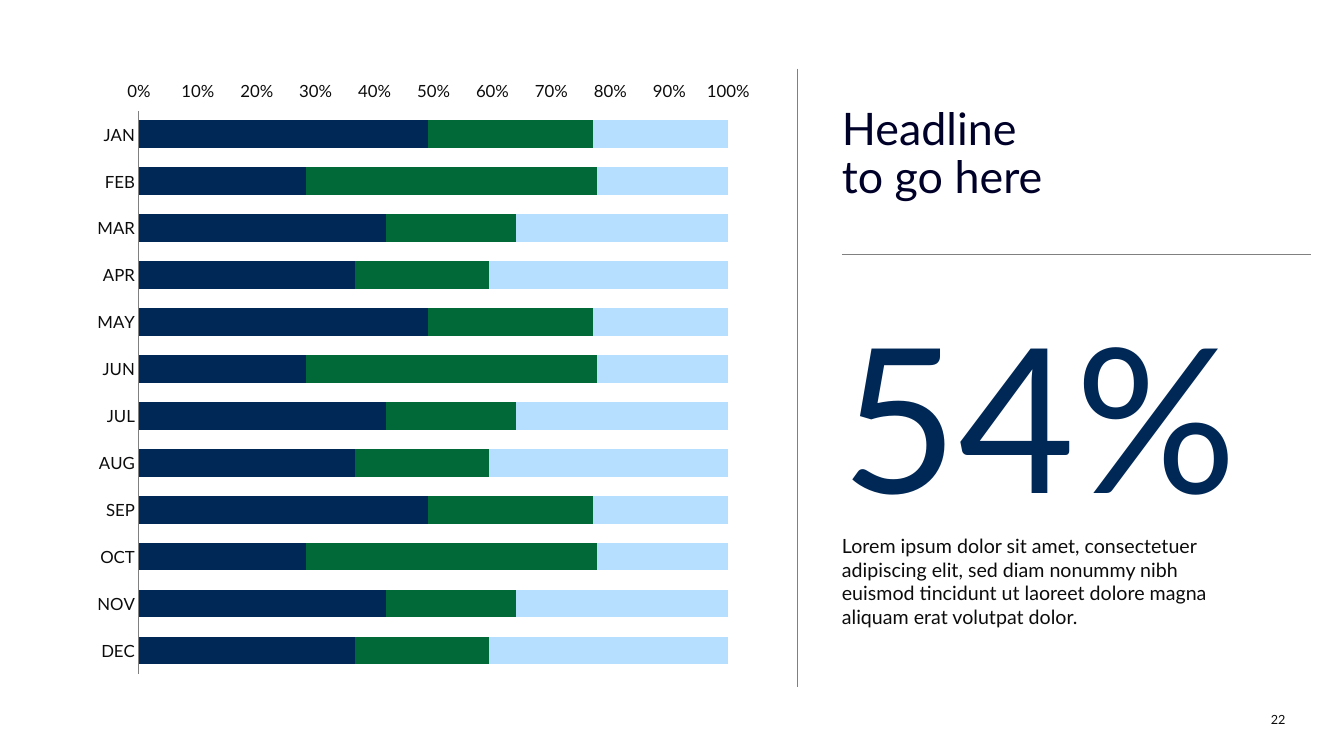
from lxml.etree import SubElement
from pptx import Presentation
from pptx.chart.data import CategoryChartData
from pptx.dml.color import RGBColor
from pptx.enum.chart import XL_CHART_TYPE, XL_TICK_LABEL_POSITION, XL_TICK_MARK
from pptx.enum.shapes import MSO_CONNECTOR
from pptx.enum.text import MSO_ANCHOR, PP_ALIGN
from pptx.oxml.ns import qn
from pptx.util import Inches, Pt

COLORS = {
    "navy": "002856",
    "green": "006937",
    "sky": "B6DFFF",
    "headline": "000129",
    "body": "0C0C0C",
    "rule": "808080",
}
FONT = "Lato"
MONTHS = ["JAN", "FEB", "MAR", "APR", "MAY", "JUN",
          "JUL", "AUG", "SEP", "OCT", "NOV", "DEC"]
SERIES = [
    ("Series 1", [49, 28, 42, 37], "navy"),
    ("Series 2", [28, 49, 22, 23], "green"),
    ("Series 3", [23, 22, 36, 41], "sky"),
]
BODY = ("Lorem ipsum dolor sit amet, consectetuer adipiscing elit, "
        "sed diam nonummy nibh euismod tincidunt ut laoreet dolore magna "
        "aliquam erat volutpat dolor.")


def color(name):
    """Return the named colour."""
    return RGBColor.from_string(COLORS[name])


def style_font(font, size, name, face=FONT):
    """Set the size, colour and face of a font."""
    font.size = Pt(size)
    font.name = face
    font.color.rgb = color(name)


def add_frame(page, left, top, width, height):
    """Add a wrapping text box without margins and return its text frame."""
    box = page.shapes.add_textbox(Inches(left), Inches(top), Inches(width), Inches(height))
    frame = box.text_frame
    frame.word_wrap = True
    frame.margin_left = frame.margin_right = frame.margin_top = frame.margin_bottom = 0
    return frame


def add_span(para, text, size, name):
    """Add one styled run to a paragraph."""
    span = para.add_run()
    span.text = text
    style_font(span.font, size, name)


def add_rule(page, left, top, right, bottom):
    """Draw a thin grey line."""
    rule = page.shapes.add_connector(
        MSO_CONNECTOR.STRAIGHT, Inches(left), Inches(top), Inches(right), Inches(bottom))
    rule.line.color.rgb = color("rule")
    rule.line.width = Pt(0.5)
    SubElement(rule._element.spPr, qn("a:effectLst"))


def add_month_chart(page, left, top, width, height):
    """Add the monthly stacked bar chart, January on top."""
    data = CategoryChartData()
    data.categories = MONTHS
    for name, cycle, _ in SERIES:
        data.add_series(name, cycle * (len(MONTHS) // len(cycle)))
    chart = page.shapes.add_chart(
        XL_CHART_TYPE.BAR_STACKED_100, Inches(left), Inches(top),
        Inches(width), Inches(height), data).chart
    chart.has_legend = False
    chart.has_title = False
    style_font(chart.font, 10, "body", "Arial")

    plot = chart.plots[0]
    plot.gap_width = 70
    plot.overlap = 100
    plot.vary_by_categories = False
    for series, (_, _, fill) in zip(plot.series, SERIES):
        series.format.fill.solid()
        series.format.fill.fore_color.rgb = color(fill)

    months = chart.category_axis
    months.reverse_order = True
    months.major_tick_mark = XL_TICK_MARK.NONE
    months.format.line.color.rgb = color("rule")
    months.format.line.width = Pt(0.75)

    shares = chart.value_axis
    shares.has_major_gridlines = False
    shares.major_tick_mark = XL_TICK_MARK.OUTSIDE
    shares.tick_label_position = XL_TICK_LABEL_POSITION.LOW
    shares.tick_labels.number_format = "0%"
    shares.tick_labels.number_format_is_linked = False
    shares.format.line.fill.background()
    for axis in (months, shares):
        style_font(axis.tick_labels.font, 12, "body")


def add_message(page, left, top, width, height):
    """Add the divider, headline, key figure and text beside the chart."""
    text_left = left + 0.44
    text_width = width - 0.44
    add_rule(page, left, top, left, top + height)
    add_rule(page, text_left, top + 1.84, left + width, top + 1.84)

    headline = add_frame(page, text_left, top + 0.38, text_width, 0.97).paragraphs[0]
    headline.line_spacing = 0.9
    add_span(headline, "Headline ", 32, "headline")
    headline.add_line_break()
    add_span(headline, "to go here", 32, "headline")

    frame = add_frame(page, text_left, top + 2.22, 4.09, 3.42)
    add_span(frame.paragraphs[0], "54%", 144, "navy")
    add_span(frame.add_paragraph(), BODY, 14, "body")


def add_page_number(page, left, top, width, height):
    """Add the page number at the bottom right."""
    frame = add_frame(page, left, top, width, height)
    frame.vertical_anchor = MSO_ANCHOR.BOTTOM
    para = frame.paragraphs[0]
    para.alignment = PP_ALIGN.RIGHT
    add_span(para, "22", 9, "body")


def main():
    """Build the slide and save the deck."""
    deck = Presentation()
    deck.slide_width = Inches(13.33)
    deck.slide_height = Inches(7.5)
    page = deck.slides.add_slide(deck.slide_layouts[6])
    add_page_number(page, 12.42, 7.01, 0.33, 0.2)
    add_message(page, 7.91, 0.68, 5.09, 6.14)
    add_month_chart(page, 0.83, 0.68, 6.74, 6.13)
    deck.save("out.pptx")


if __name__ == "__main__":
    main()
